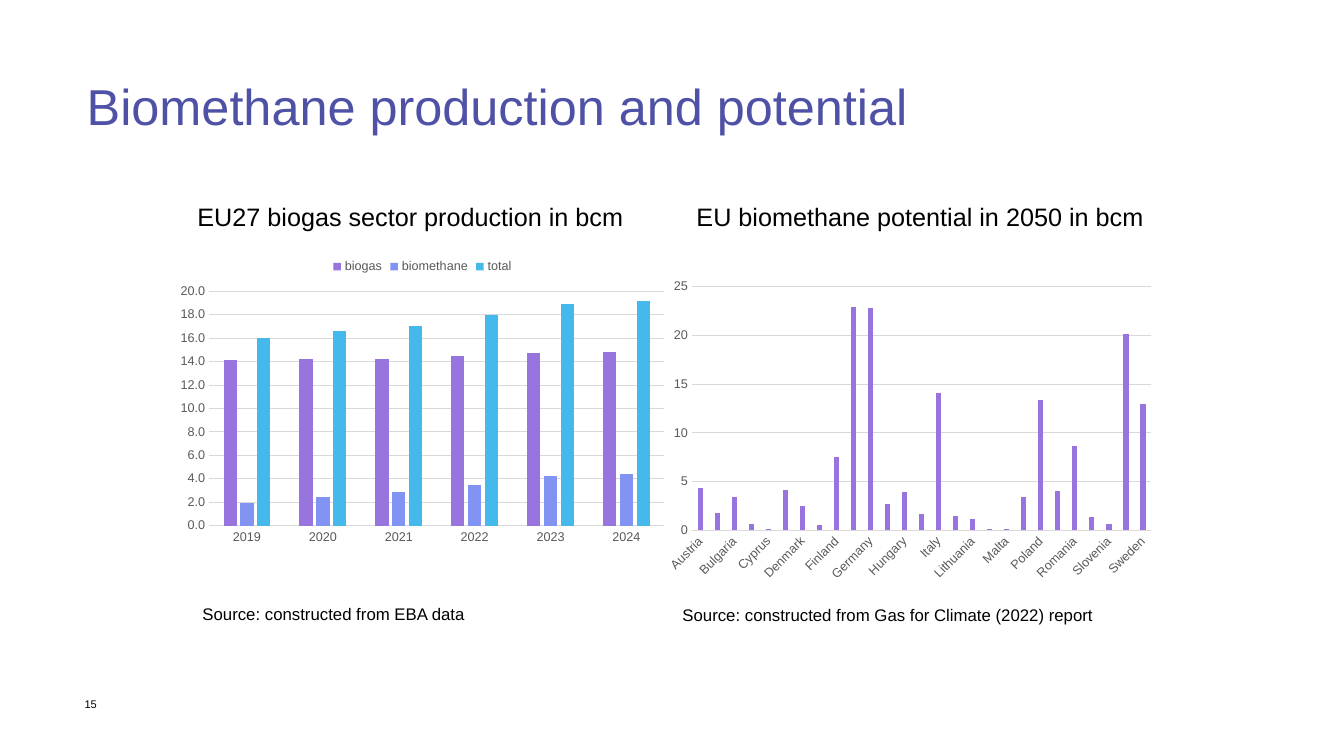
from pptx import Presentation
from pptx.chart.data import CategoryChartData
from pptx.dml.color import RGBColor
from pptx.enum.chart import XL_CHART_TYPE, XL_LEGEND_POSITION, XL_TICK_MARK
from pptx.enum.text import MSO_ANCHOR, PP_ALIGN
from pptx.util import Inches, Pt

COLORS = {"title": "4E51A5", "text": "000000", "label": "595959", "grid": "D9D9D9",
          "biogas": "9874DF", "biomethane": "8294F3", "total": "45B9EB",
          "potential": "9874DF"}

YEARS = ["2019", "2020", "2021", "2022", "2023", "2024"]
OUTPUT = {
    "biogas": [14.1, 14.2, 14.2, 14.5, 14.7, 14.8],
    "biomethane": [1.9, 2.4, 2.9, 3.5, 4.2, 4.4],
    "total": [16, 16.6, 17, 18, 18.9, 19.2],
}
POTENTIAL = {
    "Austria": 4.3, "Belgium": 1.8, "Bulgaria": 3.4, "Croatia": 0.6, "Cyprus": 0.1,
    "Czech Republic": 4.1, "Denmark": 2.5, "Estonia": 0.5, "Finland": 7.5,
    "France": 22.9, "Germany": 22.8, "Greece": 2.7, "Hungary": 3.9, "Ireland": 1.7,
    "Italy": 14.1, "Latvia": 1.5, "Lithuania": 1.2, "Luxembourg": 0.1, "Malta": 0.1,
    "The Netherlands": 3.4, "Poland": 13.4, "Portugal": 4, "Romania": 8.6,
    "Slovakia": 1.4, "Slovenia": 0.6, "Spain": 20.2, "Sweden": 13,
}


def paint(font, size, color):
    font.name = "Arial"
    font.size = Pt(size)
    font.color.rgb = RGBColor.from_string(COLORS[color])


def write(frame, text, size=12, color="text", align=None, spacing=None):
    para = frame.paragraphs[0]
    para.alignment = align
    para.line_spacing = spacing
    run = para.add_run()
    run.text = text
    paint(run.font, size, color)


class Page:
    """Holds the current slide and draws its elements in one style."""

    def __init__(self, deck):
        self.slide = deck.slides.add_slide(deck.slide_layouts[5])

    def title(self, text, box):
        shape = self.slide.shapes.title
        shape.left, shape.top, shape.width, shape.height = map(Inches, box)
        frame = shape.text_frame
        frame.word_wrap = True
        frame.vertical_anchor = MSO_ANCHOR.MIDDLE
        frame.margin_left = frame.margin_right = frame.margin_bottom = 0
        frame.margin_top = Inches(0.05)
        write(frame, text, size=36, color="title", align=PP_ALIGN.LEFT, spacing=0.9)

    def text(self, text, box, wrap=True, **style):
        shape = self.slide.shapes.add_textbox(*map(Inches, box))
        shape.text_frame.word_wrap = wrap
        write(shape.text_frame, text, **style)

    def chart(self, box, names, rows, top, step, form="General", legend=False):
        data = CategoryChartData(number_format=form)
        data.categories = names
        for name, values in rows.items():
            data.add_series(name, values)
        chart = self.slide.shapes.add_chart(
            XL_CHART_TYPE.COLUMN_CLUSTERED, *map(Inches, box), data).chart
        paint(chart.font, 10, "text")
        chart.has_title = False
        chart.has_legend = legend
        if legend:
            chart.legend.position = XL_LEGEND_POSITION.TOP
            chart.legend.include_in_layout = False
            paint(chart.legend.font, 9, "label")
        plot = chart.plots[0]
        plot.gap_width, plot.overlap = 219, -27
        plot.vary_by_categories = False
        for series in plot.series:
            series.format.fill.solid()
            series.format.fill.fore_color.rgb = RGBColor.from_string(COLORS[series.name])
            series.invert_if_negative = False
        self.axes(chart, top, step, form)

    def axes(self, chart, top, step, form):
        cat, val = chart.category_axis, chart.value_axis
        for axis in (cat, val):
            axis.major_tick_mark = axis.minor_tick_mark = XL_TICK_MARK.NONE
            paint(axis.tick_labels.font, 9, "label")
        val.minimum_scale, val.maximum_scale, val.major_unit = 0, top, step
        val.tick_labels.number_format = form
        val.tick_labels.number_format_is_linked = False
        val.has_major_gridlines = True
        val.format.line.fill.background()
        for line in (cat.format.line, val.major_gridlines.format.line):
            line.width = Pt(0.75)
            line.color.rgb = RGBColor.from_string(COLORS["grid"])
        # This angle value lets the labels turn only when they are crowded
        cat._element.txPr.bodyPr.set("rot", "-60000000")


def main():
    deck = Presentation()
    deck.slide_width, deck.slide_height = Inches(13.33), Inches(7.5)
    page = Page(deck)
    page.text("15", (0.74, 6.87, 0.45, 0.26), size=7.9)
    page.title("Biomethane production and potential", (0.86, 0.63, 11.6, 0.86))
    page.chart((1.69, 2.46, 5, 3), YEARS, OUTPUT, 20, 2, form="0.0", legend=True)
    page.chart((6.52, 2.71, 5, 3.12), list(POTENTIAL),
               {"potential": list(POTENTIAL.values())}, 25, 5)
    for left, head in ((1.86, "EU27 biogas sector production in bcm"),
                       (6.81, "EU biomethane potential in 2050 in bcm")):
        page.text(head, (left, 1.95, 4.66, 0.4), size=18)
    for left, top, width, note in (
            (1.91, 5.84, 2.93, "Source: constructed from EBA data"),
            (6.67, 5.85, 4.31, "Source: constructed from Gas for Climate (2022) report")):
        page.text(note, (left, top, width, 0.37), wrap=False,
                  align=PP_ALIGN.JUSTIFY, spacing=1.5)
    deck.save("out.pptx")


if __name__ == "__main__":
    main()
